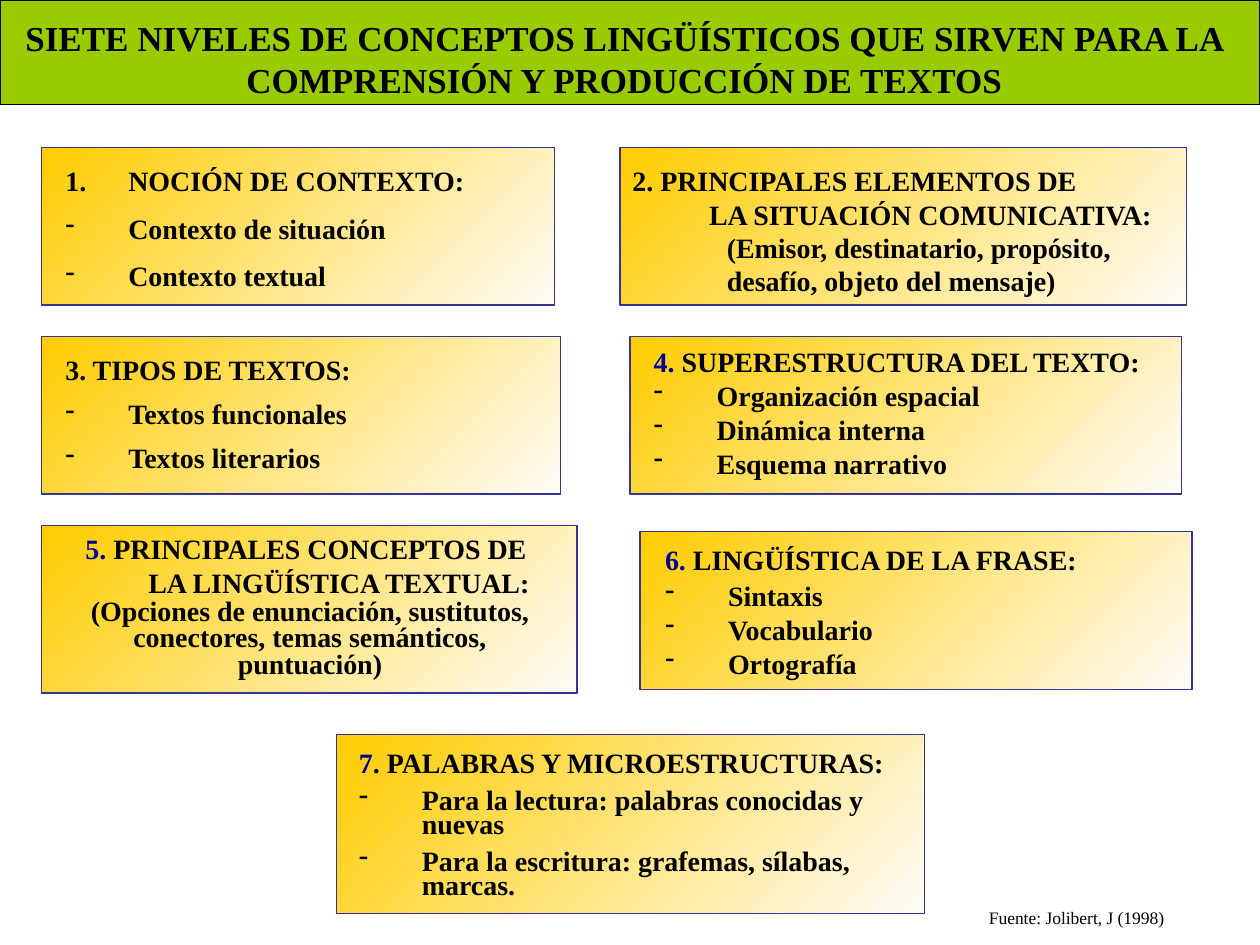
from lxml import etree
from pptx import Presentation
from pptx.dml.color import RGBColor
from pptx.enum.shapes import MSO_SHAPE
from pptx.enum.text import MSO_AUTO_SIZE, PP_ALIGN
from pptx.oxml.ns import qn
from pptx.util import Inches, Pt

RECT = MSO_SHAPE.RECTANGLE
GROW = MSO_AUTO_SIZE.SHAPE_TO_FIT_TEXT
LEFT, CENTER = PP_ALIGN.LEFT, PP_ALIGN.CENTER

BLACK = RGBColor(0x00, 0x00, 0x00)
GREEN = RGBColor(0x99, 0xCC, 0x00)
GOLD = RGBColor(0xFF, 0xCC, 0x00)
CREAM = RGBColor(0xFF, 0xFC, 0xF8)
INDIGO = RGBColor(0x33, 0x33, 0x99)
NAVY = RGBColor(0x00, 0x00, 0x99)
FONT = "Times New Roman"

TITLE = ("SIETE NIVELES DE CONCEPTOS LINGÜÍSTICOS QUE SIRVEN PARA "
         "LA COMPRENSIÓN Y PRODUCCIÓN DE TEXTOS")
SOURCE = "Fuente: Jolibert, J (1998)"

# Each panel: frame, text area, heading (navy part, black part), bulleted items.
# "spacing" holds the line spacing of the heading and of the items.
PANELS = [
    {"frame": (0.33, 1.17, 4.07, 1.25), "area": (0.42, 1.25, 4.33, 1.17),
     "heading": ("", "NOCIÓN DE CONTEXTO:"), "numbered": True,
     "items": ["Contexto de situación", "Contexto textual"]},
    {"frame": (4.92, 1.17, 4.5, 1.25), "area": (4.92, 1.25, 4.42, 1.04),
     "heading": ("", "2. PRINCIPALES ELEMENTOS DE\nLA SITUACIÓN COMUNICATIVA:"),
     "hang": 0.61},
    {"frame": (0.33, 2.67, 4.12, 1.25), "area": (0.42, 2.75, 5.08, 1.12),
     "heading": ("", "3. TIPOS DE TEXTOS:"), "spacing": (None, 0.9),
     "items": ["Textos funcionales", "Textos literarios"]},
    {"frame": (5, 2.67, 4.38, 1.25), "area": (5.09, 2.78, 4.66, 1.14),
     "heading": ("4. ", "SUPERESTRUCTURA DEL TEXTO:"), "spacing": (0.6, 0.6),
     "items": ["Organización espacial", "Dinámica interna", "Esquema narrativo"]},
    {"frame": (0.33, 4.17, 4.25, 1.33), "area": (0.58, 4.17, 4.17, 0.64),
     "heading": ("5. ", "PRINCIPALES CONCEPTOS DE\nLA LINGÜÍSTICA TEXTUAL:")},
    {"frame": (5.08, 4.22, 4.38, 1.25), "area": (5.18, 4.31, 4.66, 1.19),
     "heading": ("6. ", "LINGÜÍSTICA DE LA FRASE:"), "spacing": (0.8, 0.6),
     "items": ["Sintaxis", "Vocabulario", "Ortografía"]},
    {"frame": (2.67, 5.83, 4.67, 1.42), "area": (2.75, 5.94, 4.58, 1.31),
     "heading": ("7", ". PALABRAS Y MICROESTRUCTURAS:"), "spacing": (0.7, 0.7),
     "items": ["Para la lectura: palabras conocidas y nuevas",
               "Para la escritura: grafemas, sílabas, marcas."]},
]

# Plain texts: area, words, paragraph format, font format.
PLAIN = [
    ((0.08, 0.08, 9.75, 0.77), TITLE, {"alignment": CENTER}, {"size": Pt(20)}),
    ((5.67, 1.78, 3.92, 0.64),
     "(Emisor, destinatario, propósito, desafío, objeto del mensaje)", {}, {}),
    ((0.5, 4.71, 3.92, 0.74),
     "(Opciones de enunciación, sustitutos, conectores, temas semánticos, puntuación)",
     {"alignment": CENTER, "line_spacing": 0.8}, {}),
    ((7.75, 7.15, 1.75, 0.27), SOURCE, {}, {"size": Pt(10), "bold": False}),
]


def add_rect(s, frame, line_color):
    sp = s.shapes.add_shape(RECT, *map(Inches, frame))
    sp.shadow.inherit = False
    sp.line.color.rgb = line_color
    sp.line.width = Pt(0.75)
    return sp


def add_text_area(s, area):
    tf = s.shapes.add_textbox(*map(Inches, area)).text_frame
    tf.word_wrap = True
    tf.auto_size = GROW
    return tf


def add_runs(p, text, color=BLACK, **font):
    """Add text to the paragraph, with a line break at each newline."""
    for i, line in enumerate(text.split("\n")):
        if i:
            p.add_line_break()
        r = p.add_run()
        r.text = line
        for name, value in {"name": FONT, "size": Pt(16), "bold": True, **font}.items():
            setattr(r.font, name, value)
        r.font.color.rgb = color


def format_paragraph(p, hang=0, bullet=None, **values):
    """Set spacing before to half a line, the hanging indent and the bullet."""
    for name, value in {"alignment": LEFT, **values}.items():
        setattr(p, name, value)
    pPr = p._p.get_or_add_pPr()
    before = etree.SubElement(pPr, qn("a:spcBef"))
    etree.SubElement(before, qn("a:spcPct"), val="50000")
    if hang:
        pPr.set("marL", str(Inches(hang)))
        pPr.set("indent", str(-Inches(hang)))
    if bullet == "1.":
        etree.SubElement(pPr, qn("a:buAutoNum"), type="arabicPeriod")
    elif bullet:
        etree.SubElement(pPr, qn("a:buChar"), char=bullet)


def add_panel(s, panel):
    sp = add_rect(s, panel["frame"], INDIGO)
    sp.fill.gradient()
    sp.fill.gradient_angle = 315
    for stop, color in zip(sp.fill.gradient_stops, (GOLD, CREAM)):
        stop.color.rgb = color

    tf = add_text_area(s, panel["area"])
    hang = panel.get("hang", 0.5)
    heading_spacing, item_spacing = panel.get("spacing", (None, None))
    number, heading = panel["heading"]
    p = tf.paragraphs[0]
    format_paragraph(p, hang, "1." if panel.get("numbered") else None,
                     line_spacing=heading_spacing)
    if number:
        add_runs(p, number, NAVY)
    add_runs(p, heading)
    for item in panel.get("items", []):
        p = tf.add_paragraph()
        format_paragraph(p, hang, "-", line_spacing=item_spacing)
        add_runs(p, item)


def main():
    prs = Presentation()
    prs.slide_width, prs.slide_height = Inches(10), Inches(7.5)
    s = prs.slides.add_slide(prs.slide_layouts[6])

    banner = add_rect(s, (0, 0, 10, 0.83), BLACK)
    banner.fill.solid()
    banner.fill.fore_color.rgb = GREEN
    for panel in PANELS:
        add_panel(s, panel)
    for area, text, layout, font in PLAIN:
        p = add_text_area(s, area).paragraphs[0]
        format_paragraph(p, **layout)
        add_runs(p, text, **font)

    prs.save("out.pptx")


if __name__ == "__main__":
    main()
